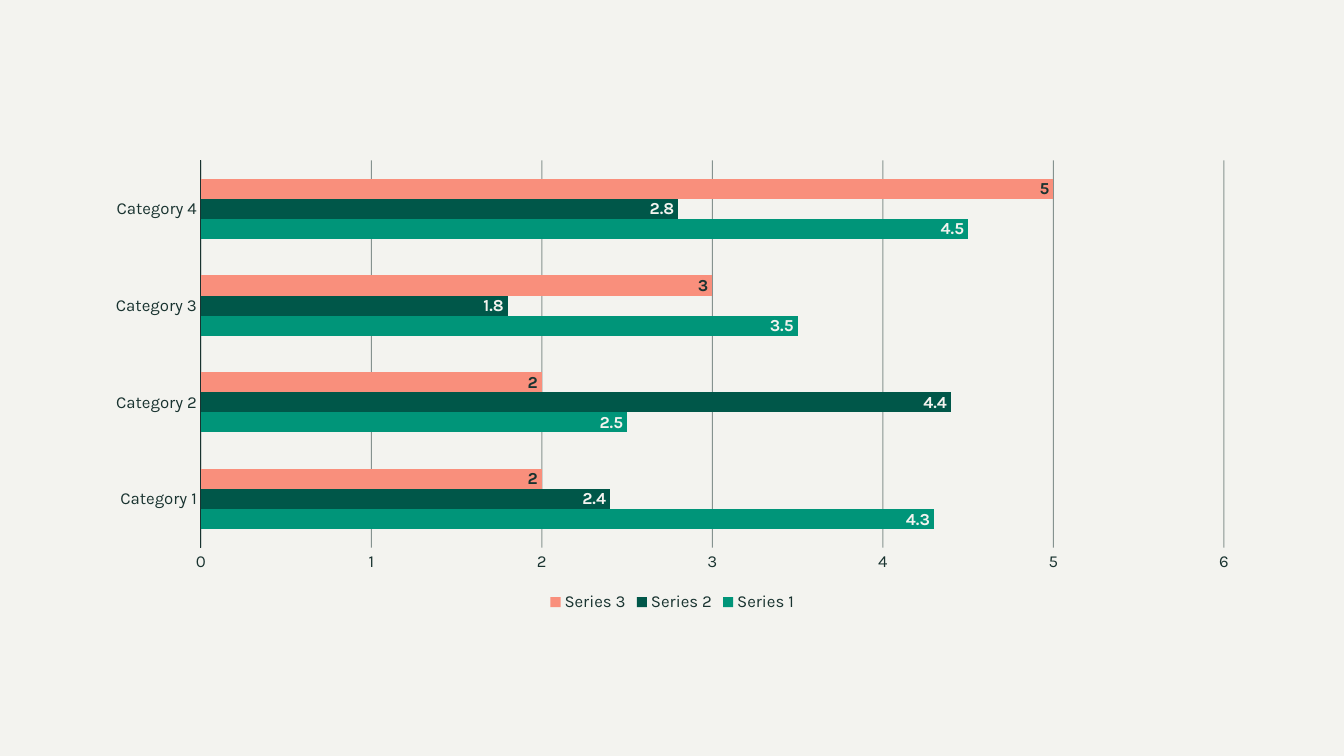
from dataclasses import dataclass

from lxml import etree
from pptx import Presentation
from pptx.chart.data import CategoryChartData
from pptx.dml.color import RGBColor
from pptx.enum.chart import (XL_CHART_TYPE, XL_LABEL_POSITION,
                             XL_LEGEND_POSITION, XL_TICK_MARK)
from pptx.oxml import parse_xml
from pptx.oxml.ns import nsdecls, qn
from pptx.util import Inches, Pt

BAR_CLUSTERED = XL_CHART_TYPE.BAR_CLUSTERED
INSIDE_END = XL_LABEL_POSITION.INSIDE_END
LEGEND_BOTTOM = XL_LEGEND_POSITION.BOTTOM
NO_TICK = XL_TICK_MARK.NONE
BLANK_LAYOUT = 6


@dataclass(frozen=True)
class Theme:
    paper: str = "F3F3EF"
    ink: str = "193330"
    green: str = "009579"
    forest: str = "005749"
    coral: str = "F98F7C"
    font: str = "Karla"
    text_size: float = 12
    base_size: float = 10
    line_width: float = 0.75


@dataclass(frozen=True)
class BarSeries:
    name: str
    values: tuple[float, ...]
    color: str
    label_color: str


THEME = Theme()
CATEGORIES = [f"Category {number}" for number in range(1, 5)]
SERIES = (
    BarSeries("Series 1", (4.3, 2.5, 3.5, 4.5), THEME.green, THEME.paper),
    BarSeries("Series 2", (2.4, 4.4, 1.8, 2.8), THEME.forest, THEME.paper),
    BarSeries("Series 3", (2, 2, 3, 5), THEME.coral, THEME.ink),
)


def format_font(font, *, color: str = THEME.ink, size: float = THEME.text_size,
                bold: bool = False) -> None:
    font.name = THEME.font
    font.size = Pt(size)
    font.bold = bold
    font.color.rgb = RGBColor.from_string(color)


def format_line(line, color: str = THEME.ink) -> None:
    line.width = Pt(THEME.line_width)
    line.color.rgb = RGBColor.from_string(color)


def set_alpha(color_element, percent: int) -> None:
    alpha = etree.SubElement(color_element, qn("a:alpha"))
    alpha.set("val", str(percent * 1000))


def fill_chart_area(chart, color: str, percent: int) -> None:
    properties = parse_xml(
        f'<c:spPr {nsdecls("c", "a")}><a:solidFill><a:srgbClr val="{color}"/>'
        '</a:solidFill><a:ln><a:noFill/></a:ln></c:spPr>')
    set_alpha(properties.find(".//" + qn("a:srgbClr")), percent)
    chart.element.find(qn("c:chart")).addnext(properties)


def format_axes(chart) -> None:
    for axis in (chart.category_axis, chart.value_axis):
        axis.major_tick_mark = axis.minor_tick_mark = NO_TICK
        format_font(axis.tick_labels.font)
    chart.category_axis.has_major_gridlines = False
    format_line(chart.category_axis.format.line)

    values = chart.value_axis
    values.minimum_scale, values.maximum_scale, values.major_unit = 0, 6, 1
    values.format.line.fill.background()
    values.has_major_gridlines = True
    format_line(values.major_gridlines.format.line)
    gridlines = chart.element.find(".//" + qn("c:majorGridlines"))
    set_alpha(gridlines.find(".//" + qn("a:srgbClr")), 50)


def format_series(series, spec: BarSeries) -> None:
    series.invert_if_negative = False
    series.format.fill.solid()
    series.format.fill.fore_color.rgb = RGBColor.from_string(spec.color)
    labels = series.data_labels
    labels.show_value = True
    labels.position = INSIDE_END
    format_font(labels.font, color=spec.label_color, bold=True)


def add_bar_chart(slide, width: int, height: int) -> None:
    data = CategoryChartData()
    data.categories = CATEGORIES
    for spec in SERIES:
        data.add_series(spec.name, spec.values)
    chart = slide.shapes.add_chart(
        BAR_CLUSTERED, int(width * 0.069), int(height * 0.2),
        int(width * 0.8625), int(height * 0.615), data).chart

    format_font(chart.font, color=THEME.forest, size=THEME.base_size)
    chart.has_title = False
    chart.has_legend = True
    chart.legend.position = LEGEND_BOTTOM
    chart.legend.include_in_layout = False
    format_font(chart.legend.font)
    format_axes(chart)

    bars = chart.plots[0]
    bars.gap_width = 182
    bars.vary_by_categories = False
    for series, spec in zip(bars.series, SERIES):
        format_series(series, spec)
    fill_chart_area(chart, THEME.paper, 75)


def main() -> None:
    deck = Presentation()
    deck.slide_width, deck.slide_height = Inches(13.33), Inches(7.5)
    slide = deck.slides.add_slide(deck.slide_layouts[BLANK_LAYOUT])
    slide.background.fill.solid()
    slide.background.fill.fore_color.rgb = RGBColor.from_string(THEME.paper)
    add_bar_chart(slide, deck.slide_width, deck.slide_height)
    deck.save("out.pptx")


if __name__ == "__main__":
    main()
